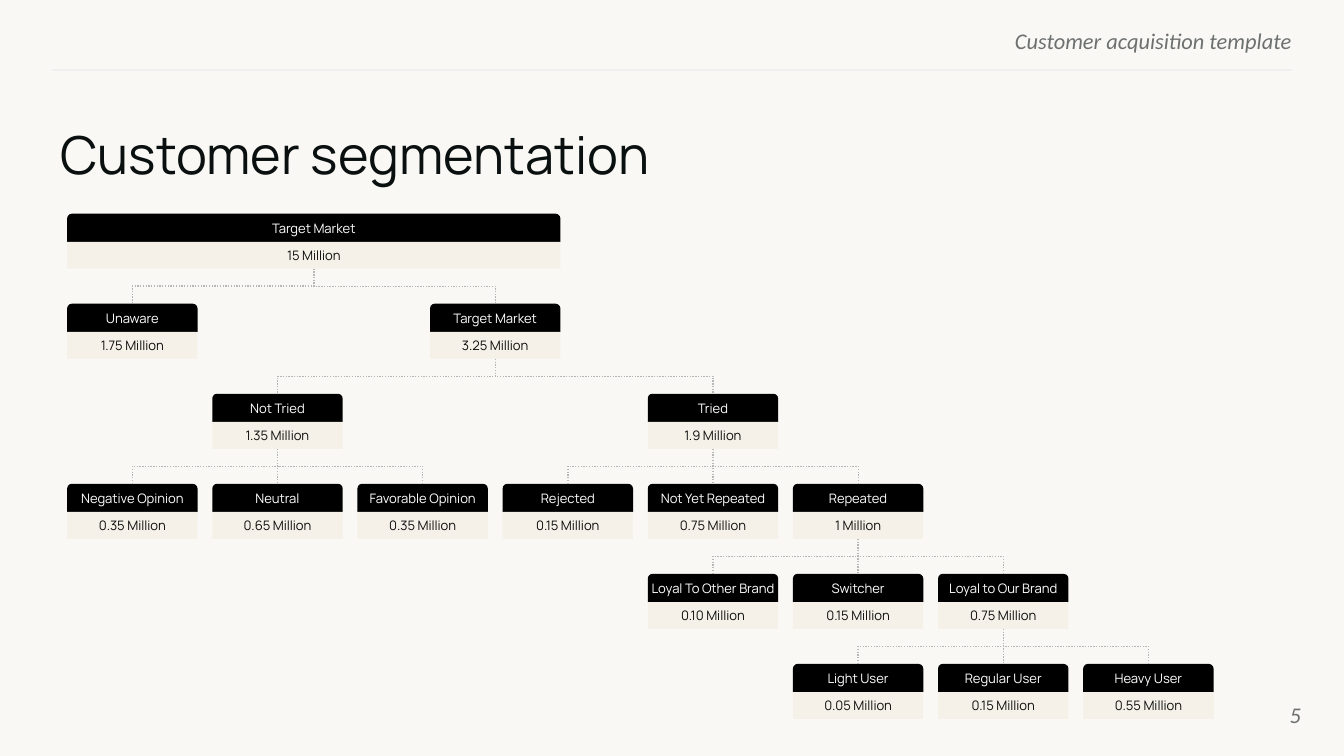
from dataclasses import dataclass
from pptx import Presentation
from pptx import util as u
from pptx.dml.color import RGBColor
from pptx.enum import dml, shapes, text
from pptx.oxml.ns import qn
from lxml import etree


@dataclass
class Theme:
    paper: str = "F9F8F5"
    rule: str = "EFEFEF"
    muted: str = "6C706F"
    ink: str = "09100F"
    head: str = "000000"
    head_text: str = "FFFFFF"
    body: str = "F5F1E8"
    body_text: str = "0E0E0E"
    link: str = "B5B7B7"
    sans: str = "Manrope"
    label: str = "Calibri"
    title_size: int = 28
    label_size: int = 12
    node_size: int = 7
    line_width: float = 0.75


theme = Theme()
deck = Presentation()
deck.slide_width = u.Inches(10)
deck.slide_height = int(deck.slide_width * 9 / 16)
page = deck.slides.add_slide(deck.slide_layouts[6])
page.background.fill.solid()
page.background.fill.fore_color.rgb = RGBColor.from_string(theme.paper)


def write(box, words, size, face, color, align, anchor, inset=(0, 0), italic=None):
    frame = box.text_frame
    frame.word_wrap = True
    frame.vertical_anchor = anchor
    frame.margin_left = frame.margin_right = u.Inches(inset[0])
    frame.margin_top = frame.margin_bottom = u.Inches(inset[1])
    para = frame.paragraphs[0]
    para.text = words
    para.alignment = align
    para.font.size = u.Pt(size)
    para.font.name = face
    para.font.italic = italic
    para.font.color.rgb = RGBColor.from_string(color)


def draw_line(kind, start, end, color):
    line = page.shapes.add_connector(kind, *(u.Inches(v) for v in (*start, *end)))
    line.line.color.rgb = RGBColor.from_string(color)
    line.line.width = u.Pt(theme.line_width)
    etree.SubElement(line._element.spPr, qn("a:effectLst"))
    return line


left, right, top, middle = text.PP_ALIGN.LEFT, text.PP_ALIGN.RIGHT, text.MSO_ANCHOR.TOP, text.MSO_ANCHOR.MIDDLE
straight, elbow = shapes.MSO_CONNECTOR.STRAIGHT, shapes.MSO_CONNECTOR.ELBOW

draw_line(straight, (9.61, 0.52), (0.39, 0.52), theme.rule)
for words, place, size, face, color, align, anchor, italic in [
    ("Customer acquisition template", (5.76, 0.2, 3.85, 0.18), theme.label_size, theme.label, theme.muted, right, top, True),
    ("Customer segmentation", (0.45, 0.91, 9.23, 0.51), theme.title_size, theme.sans, theme.ink, left, top, None),
    ("5", (9.08, 5.1, 0.6, 0.43), theme.label_size, theme.label, theme.muted, right, middle, True),
]:
    box = page.shapes.add_textbox(*(u.Inches(v) for v in place))
    write(box, words, size, face, color, align, anchor, italic=italic)

grid_left, grid_top = 0.5, 1.59
column_step, row_step = 1.08, 0.67
node_width, head_height, body_height = 0.97, 0.21, 0.2
node_height = head_height + body_height

nodes = [
    ("market", None, 0, 0, 2.5, "Target Market", "15 Million"),
    ("unaware", "market", 1, 0, 0, "Unaware", "1.75 Million"),
    ("aware", "market", 1, 2.5, 0, "Target Market", "3.25 Million"),
    ("not tried", "aware", 2, 1, 0, "Not Tried", "1.35 Million"),
    ("tried", "aware", 2, 4, 0, "Tried", "1.9 Million"),
    ("negative", "not tried", 3, 0, 0, "Negative Opinion", "0.35 Million"),
    ("neutral", "not tried", 3, 1, 0, "Neutral", "0.65 Million"),
    ("favorable", "not tried", 3, 2, 0, "Favorable Opinion", "0.35 Million"),
    ("rejected", "tried", 3, 3, 0, "Rejected", "0.15 Million"),
    ("not repeated", "tried", 3, 4, 0, "Not Yet Repeated", "0.75 Million"),
    ("repeated", "tried", 3, 5, 0, "Repeated", "1 Million"),
    ("other brand", "repeated", 4, 4, 0, "Loyal To Other Brand", "0.10 Million"),
    ("switcher", "repeated", 4, 5, 0, "Switcher", "0.15 Million"),
    ("our brand", "repeated", 4, 6, 0, "Loyal to Our Brand", "0.75 Million"),
    ("light", "our brand", 5, 5, 0, "Light User", "0.05 Million"),
    ("regular", "our brand", 5, 6, 0, "Regular User", "0.15 Million"),
    ("heavy", "our brand", 5, 7, 0, "Heavy User", "0.55 Million"),
]

placed = {}
for key, parent, row, column, extra_columns, name, value in nodes:
    x = grid_left + column * column_step
    y = grid_top + row * row_step
    width = node_width + extra_columns * column_step
    center = x + width / 2
    for kind, offset, height, words, fill, color, inset in [
        (shapes.MSO_SHAPE.ROUND_2_SAME_RECTANGLE, 0, head_height, name, theme.head, theme.head_text, (0, 0)),
        (shapes.MSO_SHAPE.RECTANGLE, head_height, body_height, value, theme.body, theme.body_text, (0.1, 0.05)),
    ]:
        box = page.shapes.add_shape(kind, *(u.Inches(v) for v in (x, y + offset, width, height)))
        box.shadow.inherit = False
        box.fill.solid()
        box.fill.fore_color.rgb = RGBColor.from_string(fill)
        box.line.fill.background()
        write(box, words, theme.node_size, theme.sans, color, text.PP_ALIGN.CENTER, middle, inset)
    placed[key] = (center, y + node_height, box)

    if parent is None:
        continue
    parent_center, parent_bottom, parent_box = placed[parent]
    run, drop = center - parent_center, y - parent_bottom
    if abs(run) < 0.01:
        link = draw_line(straight, (parent_center, parent_bottom), (center, y), theme.link)
        link.begin_connect(parent_box, 2)
    else:
        mid_x, mid_y = parent_center + run / 2, parent_bottom + drop / 2
        half_width = drop / 2 if run > 0 else -drop / 2
        half_height = abs(run) / 2
        link = draw_line(elbow, (mid_x + half_width, mid_y - half_height), (mid_x - half_width, mid_y + half_height), theme.link)
        link._element.spPr.find(qn("a:xfrm")).set("rot", str((270 if run > 0 else 90) * 60000))
    link.line.dash_style = dml.MSO_LINE.ROUND_DOT

deck.save("out.pptx")
